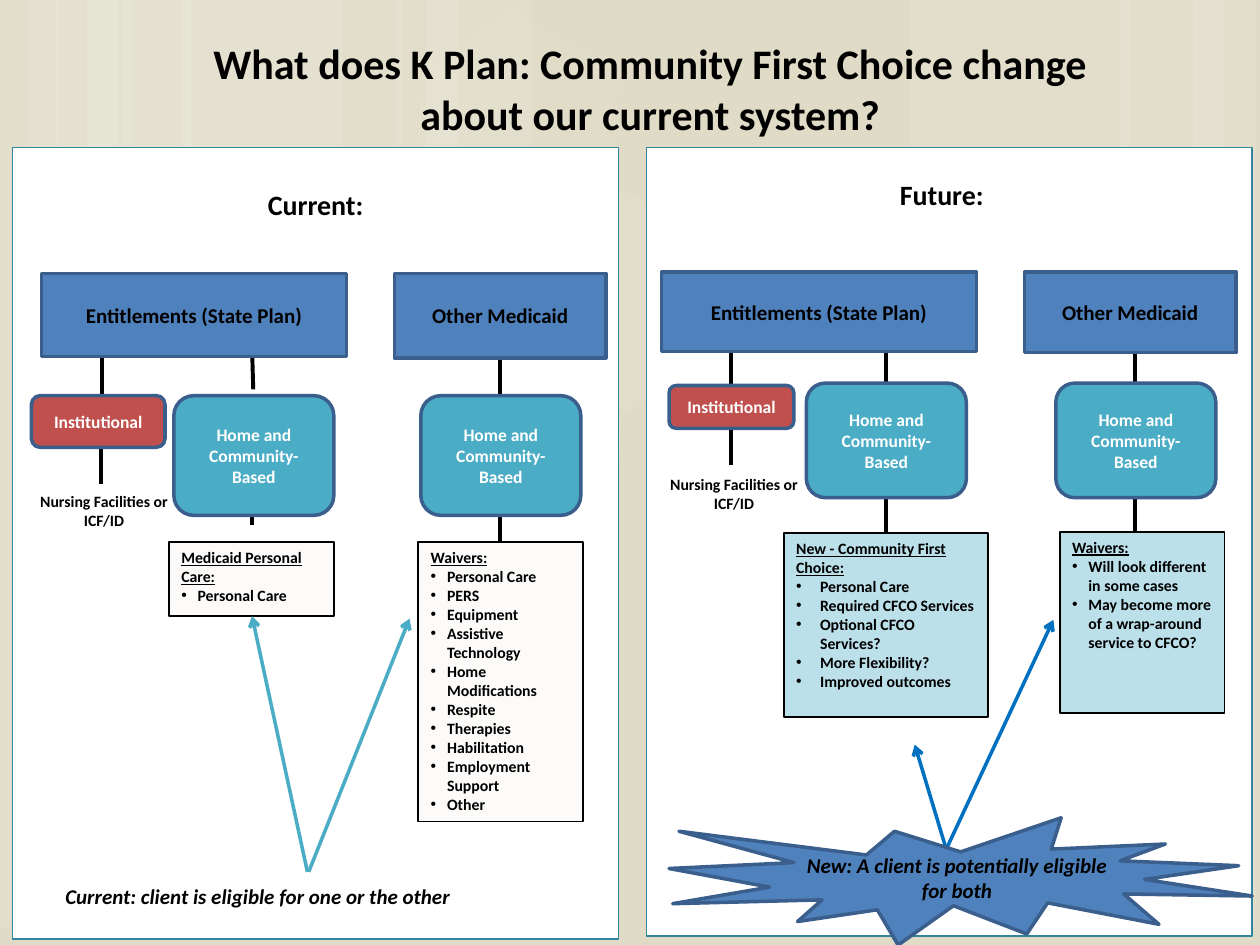
"""Build the slide comparing the current and future Medicaid systems."""
from lxml import etree
from pptx import Presentation
from pptx.dml.color import RGBColor
from pptx.enum.shapes import MSO_CONNECTOR, MSO_SHAPE
from pptx.enum.text import MSO_ANCHOR, MSO_AUTO_SIZE, PP_ALIGN
from pptx.oxml.ns import qn
from pptx.util import Inches, Pt

BLACK = RGBColor(0x00, 0x00, 0x00)
WHITE = RGBColor(0xFF, 0xFF, 0xFF)
SAND = RGBColor(0xDF, 0xDB, 0xC6)
PANEL_EDGE = RGBColor(0x31, 0x85, 0x9C)
BLUE = RGBColor(0x4F, 0x81, 0xBD)
NAVY = RGBColor(0x3A, 0x5F, 0x8C)
RED = RGBColor(0xC0, 0x50, 0x4D)
TEAL = RGBColor(0x4B, 0xAC, 0xC6)
CREAM = RGBColor(0xFC, 0xFB, 0xF9)
PALE_TEAL = RGBColor(0xBC, 0xE0, 0xEA)
ARROW_BLUE = RGBColor(0x00, 0x70, 0xC0)


class Deck:
    """Hold the font and current slide, and draw each kind of element."""

    def __init__(self, font):
        self.font = font
        self.prs = Presentation()
        self.prs.slide_width, self.prs.slide_height = Inches(10), Inches(7.5)
        self.s = self.prs.slides.add_slide(self.prs.slide_layouts[5])
        fill = self.s.background.fill
        fill.solid()
        fill.fore_color.rgb = SAND

    def add_text(self, p, text, size, color=BLACK, italic=False):
        r = p.add_run()
        r.text = text
        f = r.font
        f.name, f.size, f.bold, f.italic = self.font, Pt(size), True, italic
        f.color.rgb = color

    def fill_frame(self, sp, lines, size, color=BLACK, italic=False,
                   align=PP_ALIGN.CENTER, anchor=MSO_ANCHOR.TOP):
        tf = sp.text_frame
        tf.word_wrap, tf.vertical_anchor = True, anchor
        tf.auto_size = MSO_AUTO_SIZE.NONE
        for i, line in enumerate(lines):
            p = tf.add_paragraph() if i else tf.paragraphs[0]
            p.alignment = align
            self.add_text(p, line, size, color, italic)
        return tf

    def title(self, lines, at):
        sp = self.s.shapes.title
        sp.left, sp.top, sp.width, sp.height = map(Inches, at)
        self.fill_frame(sp, lines, 24)
        sp.element.getparent().append(sp.element)

    def shape(self, kind, at, fill, line=None, width=2.0):
        sp = self.s.shapes.add_shape(kind, *map(Inches, at))
        sp.shadow.inherit = False
        sp.fill.solid()
        sp.fill.fore_color.rgb = fill
        if line is None:
            sp.line.fill.background()
        else:
            sp.line.color.rgb = line
            sp.line.width = Pt(width)
        return sp

    def tint(self, kind, at, percent, rotation=0):
        sp = self.shape(kind, at, WHITE)
        sp.rotation = rotation
        color = sp.element.spPr.find(qn("a:solidFill"))[0]
        etree.SubElement(color, qn("a:alpha"), val=str(percent * 1000))

    def node(self, kind, at, text, fill, size, color=BLACK, italic=False):
        sp = self.shape(kind, at, fill, NAVY)
        self.fill_frame(sp, [text], size, color, italic, anchor=MSO_ANCHOR.MIDDLE)

    def label(self, at, lines, size, **style):
        sp = self.s.shapes.add_textbox(*map(Inches, at))
        return self.fill_frame(sp, lines, size, **style)

    def bullets(self, at, heading, items, fill, indent=0.13):
        sp = self.shape(MSO_SHAPE.RECTANGLE, at, fill, BLACK, 1)
        tf = self.fill_frame(sp, [heading, *items], 9, align=PP_ALIGN.LEFT)
        head, *rest = tf.paragraphs
        head.runs[0].font.underline = True
        for p in rest:
            pPr = p._p.get_or_add_pPr()
            pPr.set("marL", str(Inches(indent)))
            pPr.set("indent", str(-Inches(indent)))
            etree.SubElement(pPr, qn("a:buFont"), typeface="Arial")
            etree.SubElement(pPr, qn("a:buChar"), char="•")

    def line(self, start, end, color=BLACK, width=2.25, arrow=False):
        cx = self.s.shapes.add_connector(
            MSO_CONNECTOR.STRAIGHT, *map(Inches, (*start, *end)))
        cx.line.color.rgb = color
        cx.line.width = Pt(width)
        spPr = cx.element.spPr
        if arrow:
            etree.SubElement(spPr.find(qn("a:ln")), qn("a:tailEnd"), type="arrow")
        etree.SubElement(spPr, qn("a:effectLst"))


def draw_backdrop(deck):
    stripes = [(0.97, 1.75), (0, 0.47), (0.22, 0.83), (1.44, 1.75), (0.44, 0.5),
               (0.69, 0.83), (7.22, 1.75), (9.47, 0.5), (8.89, 0.83),
               (3.14, 0.5), (3.39, 0.83)]
    for x, w in stripes:
        deck.tint(MSO_SHAPE.RECTANGLE, (x, 0, w, 7.36), 10)
    hexagons = [(3.25, 2.99, 10), (4.05, 1.61, 7), (3.23, 0.22, 4),
                (0.03, 2.98, 7), (8.23, 3, 7)]
    for x, y, percent in hexagons:
        deck.tint(MSO_SHAPE.HEXAGON, (x, y, 1.75, 1.52), percent, 30)
    for x, h in ((5.13, 6.26), (0.1, 6.28)):
        deck.shape(MSO_SHAPE.RECTANGLE, (x, 1.17, 4.81, h), WHITE, PANEL_EDGE, 1)


def draw_tree(deck, entitlements, other, institutional, communities, nursing, links):
    for start, end in links:
        deck.line(start, end)
    for at, text in ((entitlements, "Entitlements (State Plan)"),
                     (other, "Other Medicaid")):
        deck.node(MSO_SHAPE.RECTANGLE, at, text, BLUE, 12)
    deck.node(MSO_SHAPE.ROUNDED_RECTANGLE, institutional, "Institutional",
              RED, 10, WHITE)
    for at in communities:
        deck.node(MSO_SHAPE.ROUNDED_RECTANGLE, at, "Home and Community-Based",
                  TEAL, 10, WHITE)
    deck.label(nursing, ["Nursing Facilities or", "ICF/ID"], 9)


def draw_current(deck):
    draw_tree(
        deck, (0.33, 2.17, 2.42, 0.66), (3.13, 2.17, 1.68, 0.67),
        (0.25, 3.14, 1.06, 0.41), [(x, 3.14, 1.27, 0.95) for x in (1.38, 3.34)],
        (0.17, 3.85, 1.31, 0.68),
        [((2, 3.93), (2, 4.17)), ((2, 2.75), (2.01, 3.09)),
         ((0.81, 2.84), (0.81, 3.14)), ((3.97, 2.84), (3.97, 3.14)),
         ((0.8, 3.54), (0.8, 3.84)), ((3.97, 4.08), (3.97, 4.3))])
    deck.bullets((1.34, 4.3, 1.31, 0.59), "Medicaid Personal Care:",
                 ["Personal Care"], CREAM)
    deck.bullets((3.32, 4.3, 1.31, 2.22), "Waivers:",
                 ["Personal Care", "PERS", "Equipment", "Assistive Technology",
                  "Home Modifications", "Respite", "Therapies", "Habilitation",
                  "Employment Support", "Other"], CREAM)
    deck.label((0.42, 6.96, 3.92, 0.3),
               ["Current: client is eligible for one or the other"], 12,
               italic=True, align=PP_ALIGN.LEFT)
    for tail, tip in (((2.44, 6.92), (2, 4.89)), ((2.45, 6.92), (3.25, 4.91))):
        deck.line(tail, tip, TEAL, 2, arrow=True)


def draw_future(deck):
    draw_tree(
        deck, (5.25, 2.16, 2.5, 0.63), (8.13, 2.16, 1.68, 0.64),
        (5.31, 3.06, 0.99, 0.34), [(x, 3.04, 1.27, 0.91) for x in (6.4, 8.38)],
        (5.17, 3.72, 1.31, 0.61),
        [((x, y), (x, y + 0.29)) for x, y in
         ((5.8, 2.77), (9.01, 2.75), (7.03, 2.75),
          (7.03, 3.95), (5.8, 3.4), (9.01, 3.94))])
    deck.bullets((6.22, 4.23, 1.62, 1.46), "New - Community First Choice:",
                 ["Personal Care", "Required CFCO Services",
                  "Optional CFCO Services?", "More Flexibility?",
                  "Improved outcomes"], PALE_TEAL, 0.19)
    deck.bullets((8.41, 4.22, 1.31, 1.44), "Waivers:",
                 ["Will look different in some cases",
                  "May become more of a wrap-around service to CFCO?"], PALE_TEAL)
    for tip in ((7.26, 5.91), (8.36, 4.92)):
        deck.line((7.51, 6.74), tip, ARROW_BLUE, 2, arrow=True)
    deck.node(MSO_SHAPE.EXPLOSION1, (5.31, 6.49, 4.63, 1.01),
              "New: A client is potentially eligible for both", BLUE, 12, italic=True)


def main():
    deck = Deck("Calibri")
    draw_backdrop(deck)
    draw_current(deck)
    draw_future(deck)
    for text, at, spacing in (("Current:", (0.42, 1.33, 4.17, 0.4), 1.4),
                              ("Future:", (5.31, 1.31, 4.33, 0.67), 1.2)):
        p = deck.label(at, [text], 16).paragraphs[0]
        p.line_spacing, p.space_before = spacing, Pt(6)
    deck.title(["What does K Plan: Community First Choice change",
                "about our current system?"], (0.67, 0.25, 8.98, 0.91))
    deck.prs.save("out.pptx")


if __name__ == "__main__":
    main()
